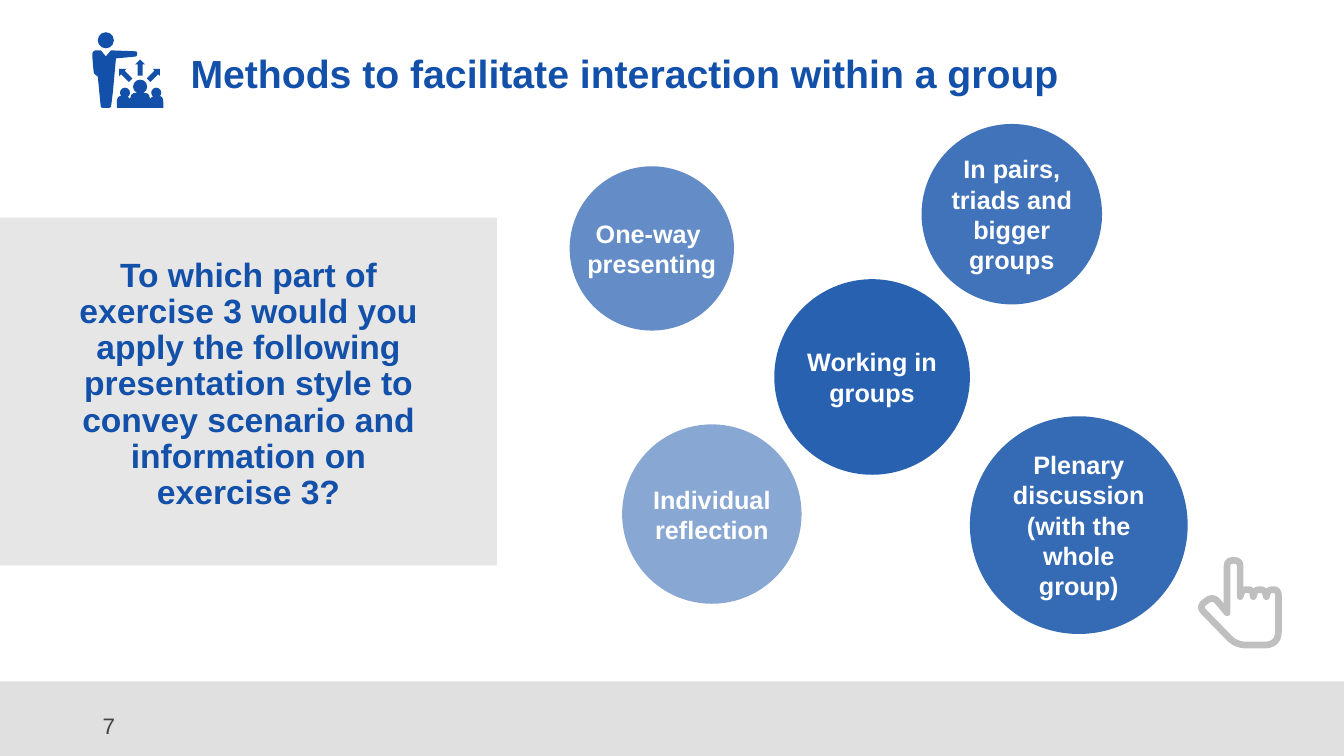
"""Build the slide on methods to facilitate interaction within a group."""
import math

from lxml import etree
from pptx import Presentation
from pptx import util as u
from pptx.dml.color import RGBColor
from pptx.enum import shapes, text
from pptx.oxml.ns import qn

FONT = "Arial"
COLORS = {"blue": "1250A9", "panel": "E7E6E6", "footer": "E0E0E0",
          "number": "424242", "white": "FFFFFF", "hand": "BFBFBF"}

TITLE = "Methods to facilitate interaction within a group"
QUESTION = ("To which part of exercise 3 would you apply the following presentation "
            "style to convey scenario and information on exercise 3?")
PAGE_NUMBER = "7"

# label, left, top, diameter, opacity in percent, wrap
METHODS = [
    ("One-way \npresenting", 5.65, 1.65, 1.63, 65, False),
    ("Working in groups", 7.68, 2.77, 1.94, 90, True),
    ("Individual reflection", 6.17, 4.21, 1.78, 50, True),
    ("Plenary discussion (with the whole group)", 9.62, 4.13, 2.16, 85, True),
    ("In pairs, triads and bigger groups", 9.14, 1.23, 1.79, 80, True),
]

HEADS = [(1.05, 0.4, 0.08), (1.39, 0.86, 0.07), (1.24, 0.92, 0.05), (1.55, 0.92, 0.05)]
ARROWS = [(1.24, 0.74, -45), (1.39, 0.67, 0), (1.53, 0.74, 45)]
SPEAKER = [(0.91, 0.5, 0.06), (1, 0.5, 0), (1.05, 0.56, 0), (1.1, 0.5, 0),
           (1.36, 0.51, 0.02), (1.36, 0.56, 0.02), (1.15, 0.58, 0), (1.12, 0.91, 0),
           (1.1, 1.07, 0.02), (1, 1.07, 0.02), (0.97, 0.76, 0), (0.93, 0.73, 0.02)]
AUDIENCE = [(1.16, 1.07, 0), (1.16, 0.95, 0.08), (1.26, 0.95, 0.04), (1.29, 0.98, 0),
            (1.31, 0.92, 0.05), (1.47, 0.92, 0.05), (1.49, 0.98, 0), (1.52, 0.95, 0.04),
            (1.62, 0.95, 0.08), (1.62, 1.07, 0)]
HAND = [(12.17, 6.08, 0), (12.17, 5.56, 0.06), (12.3, 5.56, 0.06), (12.3, 5.92, 0),
        (12.32, 5.85, 0.05), (12.42, 5.85, 0.05), (12.43, 5.92, 0),
        (12.45, 5.85, 0.05), (12.54, 5.85, 0.05), (12.56, 5.92, 0),
        (12.58, 5.85, 0.05), (12.68, 5.85, 0.06), (12.68, 6.4, 0.14),
        (12.26, 6.4, 0.1), (11.89, 6.02, 0.07), (12.03, 5.91, 0.08)]


def color(name):
    return RGBColor.from_string(COLORS[name])


def place(shape, left, top, width, height):
    shape.left, shape.top = u.Inches(left), u.Inches(top)
    shape.width, shape.height = u.Inches(width), u.Inches(height)


def paint(shape, fill):
    shape.shadow.inherit = False
    shape.fill.solid()
    shape.fill.fore_color.rgb = color(fill)
    shape.line.fill.background()


def add_preset(slide, kind, left, top, width, height, fill):
    shape = slide.shapes.add_shape(kind, *map(u.Inches, (left, top, width, height)))
    paint(shape, fill)
    return shape


def set_text(shape, content, size, ink, bold=True, align=text.PP_ALIGN.LEFT,
             anchor=text.MSO_ANCHOR.MIDDLE, spacing=1.0):
    frame = shape.text_frame
    frame.text = content
    frame.word_wrap = True
    frame.auto_size = text.MSO_AUTO_SIZE.NONE
    frame.vertical_anchor = anchor
    for paragraph in frame.paragraphs:
        paragraph.alignment = align
        paragraph.line_spacing = spacing
        paragraph.space_before = u.Pt(0)
        for run in paragraph.runs:
            run.font.name, run.font.size, run.font.bold = FONT, u.Pt(size), bold
            run.font.color.rgb = color(ink)
    return frame


def rounded_points(corners, steps=6):
    points = []
    for index, (x, y, radius) in enumerate(corners):
        if not radius:
            points.append((x, y))
            continue
        ends = []
        for other in (corners[index - 1], corners[(index + 1) % len(corners)]):
            dx, dy = other[0] - x, other[1] - y
            share = min(radius / math.hypot(dx, dy), 0.5)
            ends.append((x + dx * share, y + dy * share))
        (ax, ay), (bx, by) = ends
        for step in range(steps + 1):
            t = step / steps
            points.append(((1 - t) ** 2 * ax + 2 * t * (1 - t) * x + t * t * bx,
                           (1 - t) ** 2 * ay + 2 * t * (1 - t) * y + t * t * by))
    return points


def add_outline(slide, corners):
    points = [(u.Inches(x), u.Inches(y)) for x, y in rounded_points(corners)]
    builder = slide.shapes.build_freeform(*points[0])
    builder.add_line_segments(points[1:], close=True)
    shape = builder.convert_to_shape()
    shape.shadow.inherit = False
    return shape


def add_speaker_icon(slide):
    for corners in (SPEAKER, AUDIENCE):
        paint(add_outline(slide, corners), "blue")
    for x, y, radius in HEADS:
        add_preset(slide, shapes.MSO_SHAPE.OVAL, x - radius, y - radius,
                   2 * radius, 2 * radius, "blue")
    for x, y, angle in ARROWS:
        arrow = add_preset(slide, shapes.MSO_SHAPE.UP_ARROW, x - 0.05, y - 0.08,
                           0.1, 0.16, "blue")
        arrow.rotation = angle


def add_method(slide, label, left, top, diameter, opacity, wrap):
    circle = add_preset(slide, shapes.MSO_SHAPE.OVAL, left, top, diameter, diameter, "blue")
    fill_color = circle.element.spPr.find(qn("a:solidFill"))[0]
    etree.SubElement(fill_color, qn("a:alpha"), val=str(opacity * 1000))
    frame = set_text(circle, label, 18, "white", align=text.PP_ALIGN.CENTER)
    frame.margin_left = frame.margin_right = 0
    frame.word_wrap = wrap


def main():
    presentation = Presentation()
    presentation.slide_width, presentation.slide_height = u.Inches(13.33), u.Inches(7.5)
    slide = presentation.slides.add_slide(presentation.slide_layouts[1])
    title, question = slide.placeholders

    for box, fill in (((0, 6.76, 13.33, 0.74), "footer"), ((0, 2.16, 4.93, 3.45), "panel")):
        band = add_preset(slide, shapes.MSO_SHAPE.RECTANGLE, *box, fill)
        title.element.addprevious(band.element)

    place(title, 1.79, 0.03, 10.32, 1.45)
    set_text(title, TITLE, 28, "blue", spacing=0.9)

    place(question, 0.6, 2.51, 3.73, 2.73)
    question.text_frame.text = QUESTION
    set_text(question, QUESTION, 24, "blue", align=text.PP_ALIGN.CENTER,
             anchor=text.MSO_ANCHOR.TOP, spacing=0.9)
    properties = question.text_frame.paragraphs[0]._p.get_or_add_pPr()
    properties.set("marL", "0")
    properties.set("indent", "0")
    etree.SubElement(properties, qn("a:buNone"))

    number = slide.shapes.add_textbox(*map(u.Inches, (0.92, 7, 3, 0.4)))
    set_text(number, PAGE_NUMBER, 16, "number", bold=False)

    add_speaker_icon(slide)
    for method in METHODS:
        add_method(slide, *method)

    hand = add_outline(slide, HAND)
    hand.fill.background()
    hand.line.color.rgb = color("hand")
    hand.line.width = u.Pt(4.75)

    presentation.save("out.pptx")


if __name__ == "__main__":
    main()
